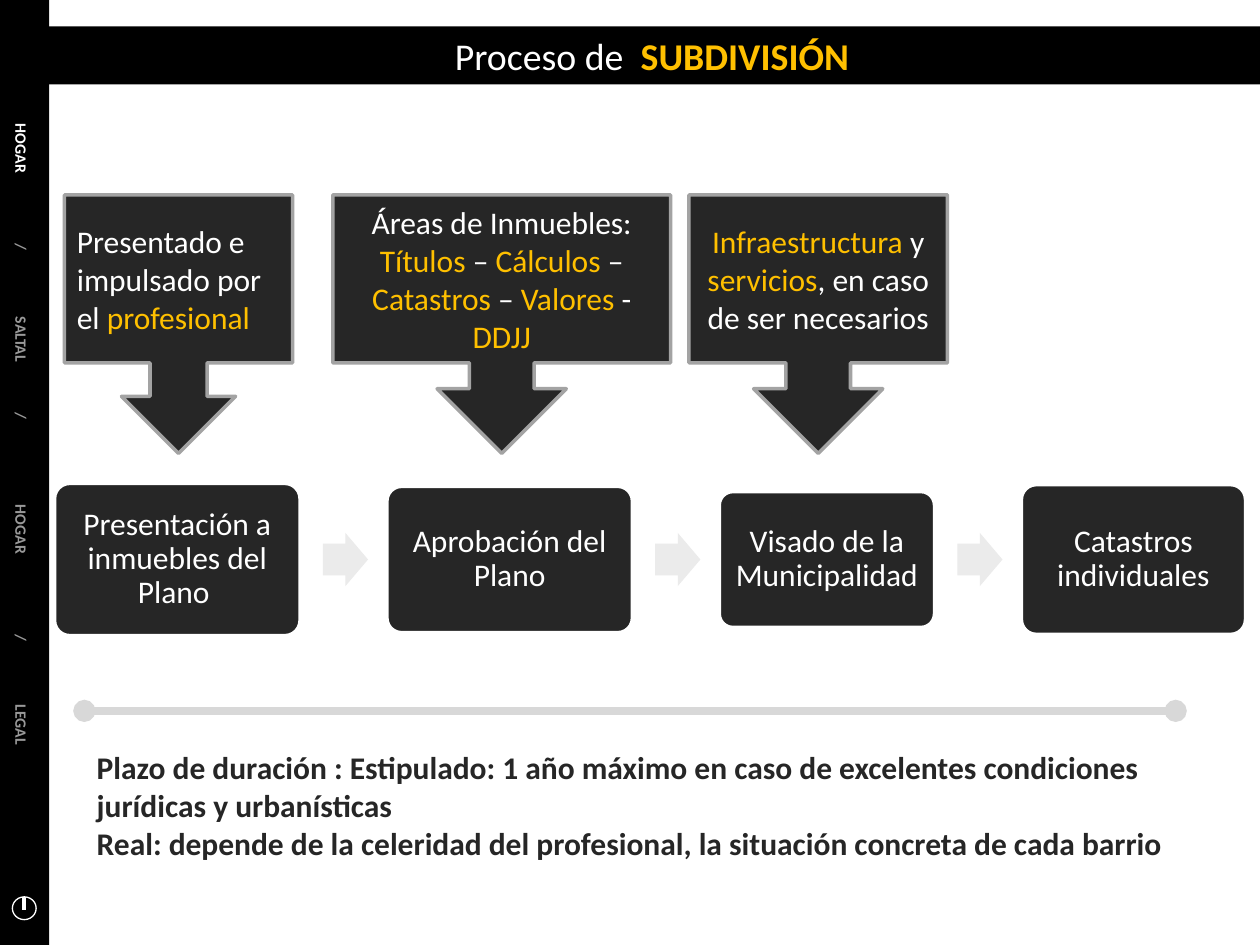
from dataclasses import dataclass

from lxml import etree
from pptx import Presentation
from pptx.dml.color import RGBColor
from pptx.enum.shapes import MSO_CONNECTOR, MSO_SHAPE
from pptx.enum.text import MSO_ANCHOR, PP_ALIGN
from pptx.oxml.ns import qn
from pptx.util import Cm, Pt

RECTANGLE = MSO_SHAPE.RECTANGLE
ROUNDED = MSO_SHAPE.ROUNDED_RECTANGLE
RIGHT_ARROW = MSO_SHAPE.RIGHT_ARROW
CALLOUT = MSO_SHAPE.DOWN_ARROW_CALLOUT
OVAL = MSO_SHAPE.OVAL
STRAIGHT = MSO_CONNECTOR.STRAIGHT
LEFT, CENTER = PP_ALIGN.LEFT, PP_ALIGN.CENTER
TOP, MIDDLE = MSO_ANCHOR.TOP, MSO_ANCHOR.MIDDLE

FONT = "Calibri"
BLACK, WHITE, DARK, GOLD = "000000", "FFFFFF", "262626", "FFC000"
STEP_MIDDLE, STEP_GAP = 11.28, 1.75
ARROW_WIDTH, ARROW_HEIGHT, ARROW_OFFSET = 0.91, 1.07, 0.46


@dataclass(frozen=True)
class Span:
    text: str
    color: str = WHITE
    bold: bool = False


@dataclass(frozen=True)
class Step:
    text: str
    width: float
    height: float


@dataclass(frozen=True)
class Callout:
    left: float
    width: float
    align: PP_ALIGN
    spans: tuple[Span, ...]


@dataclass(frozen=True)
class SidebarEntry:
    text: str
    position: float
    color: str = "999999"


STEPS = (
    Step("Presentación a inmuebles del Plano ", 4.95, 3.07),
    Step("Aprobación del Plano", 4.95, 2.95),
    Step("Visado de la Municipalidad", 4.34, 2.74),
    Step("Catastros individuales", 4.52, 3.02),
)
CALLOUTS = (
    Callout(6.71, 6.81, CENTER, (
        Span("Áreas de Inmuebles: "), Span("Títulos", GOLD), Span(" – "),
        Span("Cálculos", GOLD), Span(" – "), Span("Catastros", GOLD), Span(" – "),
        Span("Valores", GOLD), Span(" - "), Span("DDJJ", GOLD))),
    Callout(1.3, 4.6, LEFT, (
        Span("Presentado e impulsado por el "), Span("profesional", GOLD))),
    Callout(13.89, 5.21, CENTER, (
        Span("Infraestructura", GOLD), Span(" y "), Span("servicios", GOLD),
        Span(", en caso de ser necesarios"))),
)
SIDEBAR = (
    SidebarEntry("HOGAR", 2.37, WHITE),
    SidebarEntry("/", 4.77),
    SidebarEntry("SALTAL", 6.26),
    SidebarEntry("/", 8.18),
    SidebarEntry("HOGAR", 10.05),
    SidebarEntry("/", 12.66),
    SidebarEntry("LEGAL", 14.08),
)
DEADLINES = (
    "Plazo de duración : Estipulado: 1 año máximo en caso de excelentes "
    "condiciones jurídicas y urbanísticas",
    "Real: depende de la celeridad del profesional, la situación concreta de cada barrio",
)


def rgb(color: str) -> RGBColor:
    return RGBColor.from_string(color)


def write(box, *paragraphs, size=18, align=LEFT, anchor=MIDDLE,
          margins=(0.25, 0.13), line_spacing=1.0) -> None:
    frame = box.text_frame
    frame.word_wrap = True
    frame.vertical_anchor = anchor
    frame.margin_left = frame.margin_right = Cm(margins[0])
    frame.margin_top = frame.margin_bottom = Cm(margins[1])
    for index, spans in enumerate(paragraphs):
        para = frame.add_paragraph() if index else frame.paragraphs[0]
        para.alignment = align
        para.line_spacing = line_spacing
        for span in spans:
            run = para.add_run()
            run.text = span.text
            run.font.name = FONT
            run.font.size = Pt(size)
            run.font.bold = span.bold
            run.font.color.rgb = rgb(span.color)


def add_box(page, kind, left, top, width, height, fill=None, line=None, line_width=2.0):
    box = page.shapes.add_shape(kind, Cm(left), Cm(top), Cm(width), Cm(height))
    box.shadow.inherit = False
    if fill:
        box.fill.solid()
        box.fill.fore_color.rgb = rgb(fill)
    else:
        box.fill.background()
    if line:
        box.line.color.rgb = rgb(line)
        box.line.width = Pt(line_width)
    else:
        box.line.fill.background()
    return box


def add_line(page, start, end, color, width, round_ends=False) -> None:
    line = page.shapes.add_connector(STRAIGHT, *(Cm(value) for value in start + end))
    line.line.color.rgb = rgb(color)
    line.line.width = Pt(width)
    if round_ends:
        outline = line.line._get_or_add_ln()
        for end_name in ("a:headEnd", "a:tailEnd"):
            etree.SubElement(outline, qn(end_name), type="oval")
    etree.SubElement(line._element.spPr, qn("a:effectLst"))


def add_title(page) -> None:
    title = page.shapes.title
    title.left, title.top, title.width, title.height = Cm(0.89), Cm(0.53), Cm(24.51), Cm(1.17)
    title.fill.solid()
    title.fill.fore_color.rgb = rgb(BLACK)
    write(title, (Span("Proceso de  "), Span("SUBDIVISIÓN", GOLD, True)),
          size=21.6, align=CENTER)


def add_steps(page) -> None:
    left = 1.1
    for index, step in enumerate(STEPS):
        if index:
            add_arrow(page, left - STEP_GAP + ARROW_OFFSET)
        box = add_box(page, ROUNDED, left, STEP_MIDDLE - step.height / 2,
                      step.width, step.height, DARK, WHITE)
        box.adjustments[0] = 0.1
        write(box, (Span(step.text),), align=CENTER, margins=(0.13, 0.27), line_spacing=0.9)
        left += step.width + STEP_GAP


def add_arrow(page, left: float) -> None:
    arrow = add_box(page, RIGHT_ARROW, left, STEP_MIDDLE - ARROW_HEIGHT / 2,
                    ARROW_WIDTH, ARROW_HEIGHT, "EBEBEB")
    arrow.adjustments[0] = 0.6


def add_callout(page, callout: Callout) -> None:
    box = add_box(page, CALLOUT, callout.left, 3.93, callout.width, 5.21, DARK, "A3A3A3")
    write(box, callout.spans, align=callout.align)


def add_sidebar(page) -> None:
    add_box(page, RECTANGLE, 0, 0, 0.99, 19.05, BLACK)
    band = add_box(page, RECTANGLE, 0, 0, 0.94, 19.02, BLACK)
    color = band._element.spPr.find(qn("a:solidFill"))[0]
    etree.SubElement(color, qn("a:alpha"), val="40000")
    write(band, [Span("\t" + entry.text, entry.color, True) for entry in SIDEBAR],
          size=9, anchor=TOP, margins=(0.31, 0.13))
    band.text_frame._txBody.bodyPr.set("vert", "eaVert")
    properties = band.text_frame.paragraphs[0]._p.get_or_add_pPr()
    tabs = etree.SubElement(properties, qn("a:tabLst"))
    for entry in SIDEBAR:
        etree.SubElement(tabs, qn("a:tab"), pos=str(Cm(entry.position)), algn="l")
    add_box(page, OVAL, 0.25, 18.08, 0.48, 0.46, line=WHITE, line_width=0.75)
    add_line(page, (0.48, 18.34), (0.48, 18.08), WHITE, 2)


def add_deadlines(page) -> None:
    add_line(page, (1.7, 14.33), (23.7, 14.33), "D8D8D8", 4.25, round_ends=True)
    box = page.shapes.add_textbox(Cm(1.7), Cm(14.95), Cm(22.4), Cm(2.57))
    write(box, *((Span(text, DARK, True),) for text in DEADLINES), anchor=TOP)


def main() -> None:
    deck = Presentation()
    deck.slide_width, deck.slide_height = Cm(25.4), Cm(19.05)
    page = deck.slides.add_slide(deck.slide_layouts[5])
    add_steps(page)
    for callout in CALLOUTS:
        add_callout(page, callout)
    add_deadlines(page)
    add_sidebar(page)
    add_title(page)
    deck.save("out.pptx")


if __name__ == "__main__":
    main()
